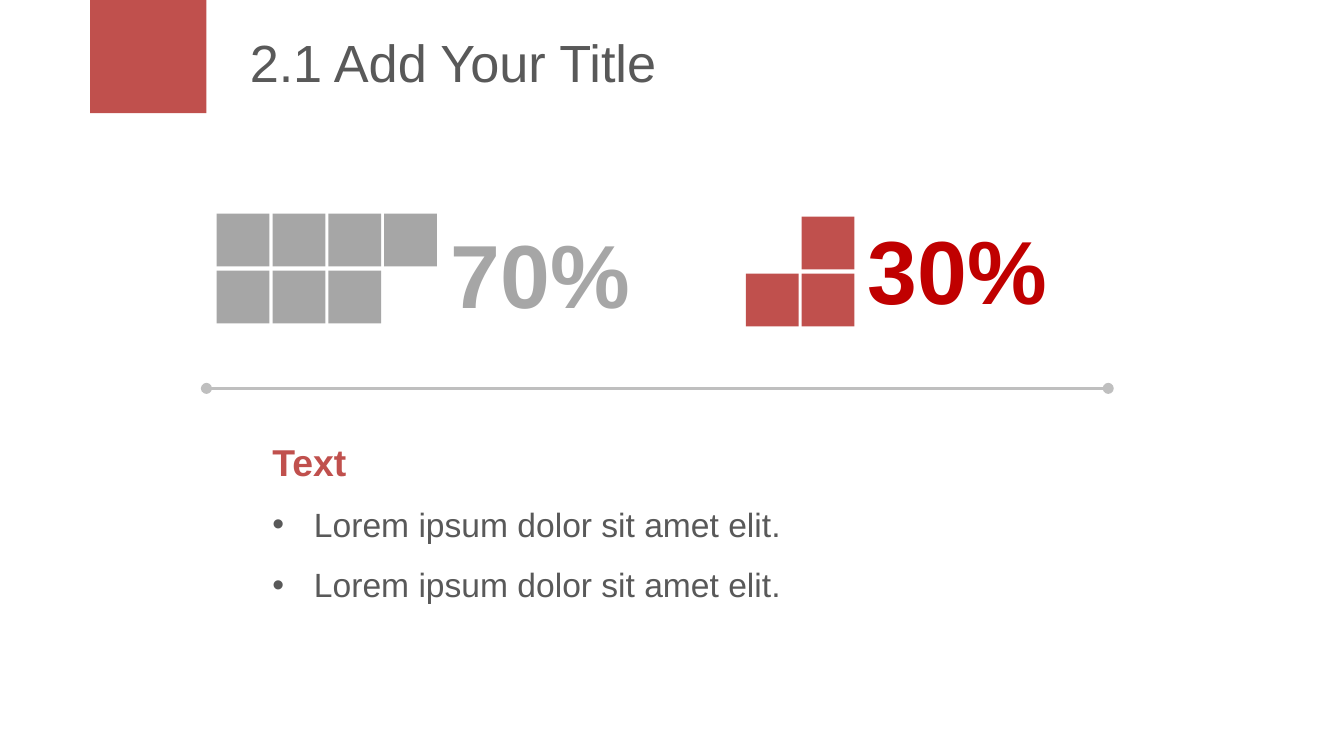
from lxml import etree
from pptx import Presentation, util as u
from pptx.dml.color import RGBColor
from pptx.enum import shapes as sh, text as tx
from pptx.oxml import ns

RED = RGBColor(0xC0, 0x50, 0x4D)
DEEP = RGBColor(0xC0, 0x00, 0x00)
GREY = RGBColor(0xA6, 0xA6, 0xA6)
PALE = RGBColor(0xBF, 0xBF, 0xBF)
INK = RGBColor(0x59, 0x59, 0x59)

WIDE = u.Inches(10)
HIGH = WIDE * 9 // 16
UNIT = WIDE / 100
SIDE, STEP, RISE = 3.93, 4.15, 4.24


def place(*box):
    return [round(part * UNIT) for part in box]


def node(dad, tag, **vals):
    return etree.SubElement(dad, ns.qn(tag), vals)


def style(font, look):
    for key, val in look.items():
        if key == "color":
            font.color.rgb = val
        else:
            setattr(font, key, val)


def tile(slide, box, color):
    rect = slide.shapes.add_shape(sh.MSO_SHAPE.RECTANGLE, *place(*box))
    rect.shadow.inherit = False
    rect.fill.solid()
    rect.fill.fore_color.rgb = color
    rect.line.fill.background()


def label(slide, box, lines, anchor=tx.MSO_ANCHOR.TOP, space=None):
    frame = slide.shapes.add_textbox(*place(*box)).text_frame
    for key, val in {"word_wrap": True, "vertical_anchor": anchor}.items():
        setattr(frame, key, val)
    for i, (words, look, dot) in enumerate(lines):
        para = frame.add_paragraph() if i else frame.paragraphs[0]
        para.line_spacing = space
        run = para.add_run()
        run.text = words
        style(run.font, {"name": "Arial", **look})
        if dot:
            props = para._p.get_or_add_pPr()
            props.set("marL", str(u.Inches(0.31)))
            props.set("indent", str(-u.Inches(0.31)))
            node(props, "a:buFont", typeface="Arial")
            node(props, "a:buChar", char="•")


def header(slide, box):
    x, y, w, h = box
    tile(slide, (x, y, 8.65, h), RED)
    look = {"size": u.Pt(28), "color": INK}
    label(slide, (x + 10.9, y + 1.4, w - 10.9, 6.3),
          [("2.1 Add Your Title", look, False)], tx.MSO_ANCHOR.MIDDLE)


def share(slide, box, cells, hue, words, tint, drop):
    x, y, w, h = box
    for row, cols in enumerate(cells):
        for col in cols:
            tile(slide, (x + col * STEP, y + row * RISE, SIDE, SIDE), hue)
    look = {"size": u.Pt(48), "bold": True, "color": tint}
    label(slide, (x + w - 20.5, y + drop, 20.5, h), [(words, look, False)])


def rule(slide, box):
    x, y, w, h = place(*box)
    line = slide.shapes.add_connector(sh.MSO_CONNECTOR.STRAIGHT, x, y, x + w, y + h)
    line.line.color.rgb = PALE
    line.line.width = u.Pt(1.5)
    props = line._element.spPr
    for tag in ("a:headEnd", "a:tailEnd"):
        node(props.get_or_add_ln(), tag, type="oval")
    node(props, "a:effectLst")


def notes(slide, box):
    head = {"size": u.Pt(20), "bold": True, "color": RED}
    body = {"size": u.Pt(18), "bold": False, "color": INK}
    item = ("Lorem ipsum dolor sit amet elit.", body, True)
    label(slide, box, [("Text", head, False), item, item], space=1.5)


def main():
    deck = Presentation()
    deck.slide_width, deck.slide_height = WIDE, HIGH
    slide = deck.slides.add_slide(deck.slide_layouts[6])
    header(slide, (6.7, 0, 89.8, 8.42))
    share(slide, (16.13, 15.9, 36.9, 9.1), (range(4), range(3)), GREY, "70%", GREY, -0.1)
    share(slide, (55.5, 16.12, 28.6, 9.1), ((1,), range(2)), RED, "30%", DEEP, -0.6)
    rule(slide, (15.36, 28.9, 67.1, 0))
    notes(slide, (19.28, 30.5, 62.2, 15.1))
    deck.save("out.pptx")


if __name__ == "__main__":
    main()
